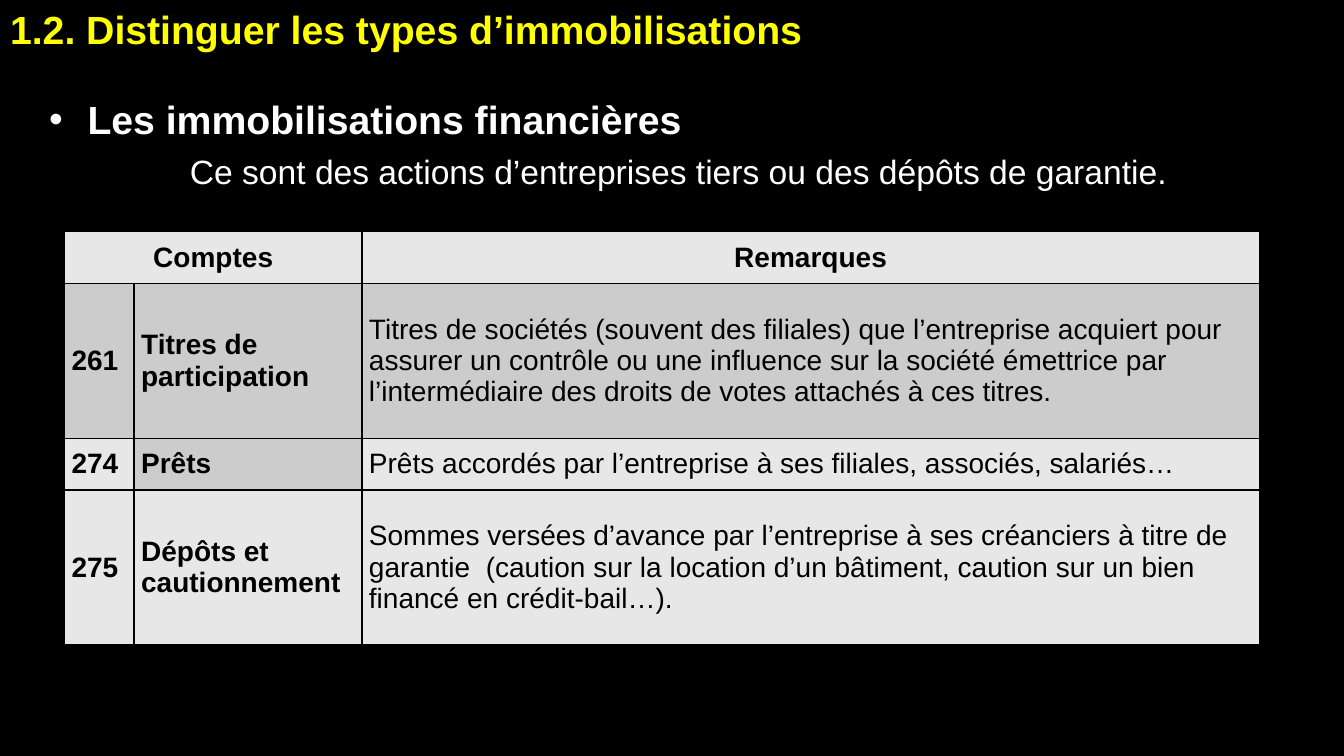
import pptx
import pptx.dml.color
import pptx.enum.text
import pptx.oxml
import pptx.oxml.ns
import pptx.util

RGBColor = pptx.dml.color.RGBColor
BLACK = RGBColor(0x00, 0x00, 0x00)
WHITE = RGBColor(0xFF, 0xFF, 0xFF)
YELLOW = RGBColor(0xFF, 0xFF, 0x00)
LIGHT = RGBColor(0xE7, 0xE7, 0xE7)
GREY = RGBColor(0xCC, 0xCC, 0xCC)

LEFT = pptx.enum.text.PP_ALIGN.LEFT
CENTER = pptx.enum.text.PP_ALIGN.CENTER
WIDTH, HEIGHT = 13.33, 7.5
COLUMNS = (0.69, 2.26, 8.9)
LOW_ROW, HIGH_ROW = 0.51, 1.54

ACCOUNTS = [
    ("261", "Titres de participation",
     "Titres de sociétés (souvent des filiales) que l’entreprise acquiert pour assurer "
     "un contrôle ou une influence sur la société émettrice par l’intermédiaire des "
     "droits de votes attachés à ces titres.",
     HIGH_ROW, (GREY, GREY, GREY), 1),
    ("274", "Prêts",
     "Prêts accordés par l’entreprise à ses filiales, associés, salariés…",
     LOW_ROW, (LIGHT, GREY, LIGHT), 1),
    ("275", "Dépôts et cautionnement",
     "Sommes versées d’avance par l’entreprise à ses créanciers à titre de garantie  "
     "(caution sur la location d’un bâtiment, caution sur un bien financé en crédit-bail…).",
     HIGH_ROW, (LIGHT, LIGHT, LIGHT), 2),
]


class SlideBuilder:
    font_name = "Arial"

    def __init__(self, presentation):
        self.presentation = presentation
        self.slide = presentation.slides.add_slide(presentation.slide_layouts[5])
        self.slide.background.fill.solid()
        self.slide.background.fill.fore_color.rgb = BLACK

    def area(self, left, top, width, height):
        full_width = self.presentation.slide_width
        full_height = self.presentation.slide_height
        return (round(left * full_width), round(top * full_height),
                round(width * full_width), round(height * full_height))

    def add_text(self, paragraph, text, size, color, bold=False, align=LEFT, before=0, after=0):
        paragraph.alignment = align
        paragraph.space_before = pptx.util.Pt(before)
        paragraph.space_after = pptx.util.Pt(after)
        run = paragraph.add_run()
        run.text = text
        run.font.name = self.font_name
        run.font.size = pptx.util.Pt(size)
        run.font.bold = bold
        run.font.color.rgb = color

    def prepare(self, frame):
        frame.word_wrap = True
        frame.auto_size = pptx.enum.text.MSO_AUTO_SIZE.SHAPE_TO_FIT_TEXT
        frame.vertical_anchor = pptx.enum.text.MSO_ANCHOR.TOP

    def title(self, text, area):
        shape = self.slide.shapes.title
        shape.left, shape.top, shape.width, shape.height = self.area(*area)
        self.prepare(shape.text_frame)
        self.add_text(shape.text_frame.paragraphs[0], text, 28, YELLOW, True, before=12, after=6)

    def introduction(self, heading, sentence, area):
        frame = self.slide.shapes.add_textbox(*self.area(*area)).text_frame
        self.prepare(frame)
        paragraph = frame.paragraphs[0]
        self.add_text(paragraph, heading, 28, WHITE, True, before=12)
        self.bullet(paragraph, 0.38)
        self.add_text(frame.add_paragraph(), sentence, 24, WHITE, align=CENTER, before=6, after=6)

    def bullet(self, paragraph, indent):
        properties = paragraph._p.get_or_add_pPr()
        distance = pptx.util.Inches(indent)
        properties.set("marL", str(distance))
        properties.set("indent", str(-distance))
        for tag, name, value in (("buFont", "typeface", self.font_name), ("buChar", "char", "•")):
            element = pptx.oxml.parse_xml(
                f'<a:{tag} {pptx.oxml.ns.nsdecls("a")} {name}="{value}"/>')
            properties.append(element)

    def table(self, area, column_widths, row_heights):
        shape = self.slide.shapes.add_table(
            len(row_heights), len(column_widths), *self.area(*area))
        for column, width in zip(shape.table.columns, column_widths):
            column.width = pptx.util.Inches(width)
        for row, height in zip(shape.table.rows, row_heights):
            row.height = pptx.util.Inches(height)
        return shape.table

    def cell(self, cell, text, fill, bold=True, align=LEFT, top_border=1):
        cell.fill.solid()
        cell.fill.fore_color.rgb = fill
        cell.vertical_anchor = pptx.enum.text.MSO_ANCHOR.MIDDLE
        cell.margin_left = cell.margin_right = pptx.util.Inches(0.07)
        cell.margin_top = cell.margin_bottom = 0
        if text:
            self.add_text(cell.text_frame.paragraphs[0], text, 20, BLACK, bold, align, 2, 2)
        self.borders(cell, top_border)

    def borders(self, cell, top_border):
        properties = cell._tc.get_or_add_tcPr()
        sides = (("lnL", 1), ("lnR", 1), ("lnT", top_border), ("lnB", 1))
        for position, (tag, width) in enumerate(sides):
            line = pptx.oxml.parse_xml(
                f'<a:{tag} {pptx.oxml.ns.nsdecls("a")} w="{pptx.util.Pt(width)}">'
                f'<a:solidFill><a:srgbClr val="{BLACK}"/></a:solidFill></a:{tag}>')
            properties.insert(position, line)


def main():
    presentation = pptx.Presentation()
    presentation.slide_width = pptx.util.Inches(WIDTH)
    presentation.slide_height = pptx.util.Inches(HEIGHT)
    builder = SlideBuilder(presentation)

    builder.introduction(
        "Les immobilisations financières",
        "Ce sont des actions d’entreprises tiers ou des dépôts de garantie. ",
        (0.39 / WIDTH, 0.12, 12.77 / WIDTH, 1.06 / HEIGHT))

    row_heights = [LOW_ROW] + [account[3] for account in ACCOUNTS]
    table = builder.table(
        (0.64 / WIDTH, 2.3 / HEIGHT, sum(COLUMNS) / WIDTH, sum(row_heights) / HEIGHT),
        COLUMNS, row_heights)
    table.cell(0, 0).merge(table.cell(0, 1))
    for column, heading in enumerate(("Comptes", "", "Remarques")):
        builder.cell(table.cell(0, column), heading, LIGHT, align=CENTER)
    for row, (number, name, remark, _, fills, top_border) in enumerate(ACCOUNTS, 1):
        for column, text in enumerate((number, name, remark)):
            builder.cell(table.cell(row, column), text, fills[column],
                         bold=column < 2, top_border=top_border)

    builder.title("1.2. Distinguer les types d’immobilisations",
                  (0, 0, 11.11 / WIDTH, 0.57 / HEIGHT))
    presentation.save("out.pptx")


if __name__ == "__main__":
    main()
